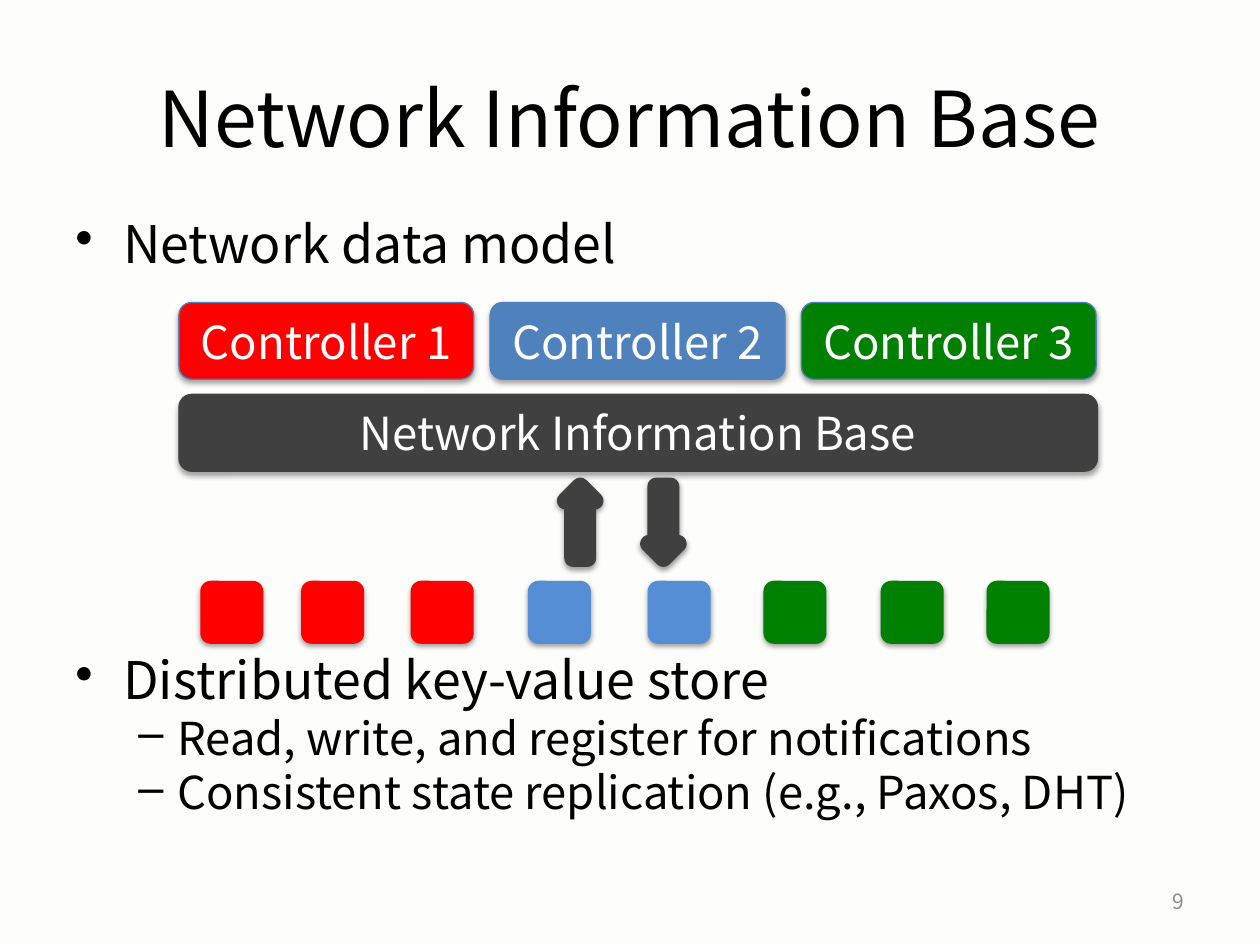
from lxml.etree import SubElement
from pptx import Presentation
from pptx.dml.color import RGBColor
from pptx.enum.shapes import MSO_SHAPE as Kind
from pptx.enum.text import MSO_ANCHOR as Anchor, PP_ALIGN as Align
from pptx.oxml.ns import qn
from pptx.util import Inches, Pt

COLORS = {
    "paper": "FDFDFC", "ink": "000000", "white": "FFFFFF", "page": "8C8C8C",
    "dark": "404040", "red": "FF0000", "blue": "4F81BD", "sky": "558ED5",
    "green": "008000",
}


def rgb(name):
    return RGBColor.from_string(COLORS[name])


class Deck:
    font = "Noto Sans CJK JP"

    def __init__(self, slide):
        self.slide = slide
        fill = slide.background.fill
        fill.solid()
        fill.fore_color.rgb = rgb("paper")

    def run(self, para, text, size, color):
        run = para.add_run()
        run.text = text
        run.font.size = Pt(size)
        run.font.name = self.font
        run.font.color.rgb = rgb(color)

    def frame(self, box, anchor):
        frame = self.slide.shapes.add_textbox(*map(Inches, box)).text_frame
        frame.word_wrap = True
        frame.vertical_anchor = anchor
        return frame

    def label(self, box, text, size, color, align):
        para = self.frame(box, Anchor.MIDDLE).paragraphs[0]
        para.alignment = align
        self.run(para, text, size, color)

    def bullets(self, box, items):
        """Write (level, text) items as a bulleted list."""
        frame = self.frame(box, Anchor.TOP)
        styles = [("•", 0.38, 0.38, 29.6), ("–", 0.81, 0.31, 25.9)]
        for i, (level, text) in enumerate(items):
            para = frame.add_paragraph() if i else frame.paragraphs[0]
            mark, left, hang, size = styles[level]
            para.level = level
            para.line_spacing = 0.9
            para.space_before = Pt(3)
            props = para._p.get_or_add_pPr()
            props.set("marL", str(Inches(left)))
            props.set("indent", str(-Inches(hang)))
            SubElement(props, qn("a:buChar"), char=mark)
            self.run(para, text, size, "ink")

    def shade(self, shape, drop, alpha):
        """Give the shape a soft shadow straight below it."""
        shape.shadow.inherit = False
        effects = shape._element.spPr.find(qn("a:effectLst"))
        outer = SubElement(effects, qn("a:outerShdw"), blurRad=str(Pt(3.1)),
                           dist=str(Pt(drop)), dir="5400000", rotWithShape="0")
        tint = SubElement(outer, qn("a:srgbClr"), val=COLORS["ink"])
        SubElement(tint, qn("a:alpha"), val=str(alpha * 1000))

    def shape(self, kind, box, fill, line=None, width=0.75, drop=1.6, alpha=38):
        shape = self.slide.shapes.add_shape(kind, *map(Inches, box))
        shape.fill.solid()
        shape.fill.fore_color.rgb = rgb(fill)
        if line:
            shape.line.color.rgb = rgb(line)
            shape.line.width = Pt(width)
        else:
            shape.line.fill.background()
        self.shade(shape, drop, alpha)
        return shape

    def block(self, box, text, fill, line):
        shape = self.shape(Kind.ROUNDED_RECTANGLE, box, fill, line,
                           drop=1.8, alpha=35)
        frame = shape.text_frame
        frame.vertical_anchor = Anchor.MIDDLE
        para = frame.paragraphs[0]
        para.alignment = Align.CENTER
        self.run(para, text, 26, "white")

    def node(self, left, fill):
        self.shape(Kind.ROUNDED_RECTANGLE, (left, 4.61, 0.5, 0.5), fill)

    def arrow(self, left, turn):
        shape = self.shape(Kind.UP_ARROW, (left, 3.86, 0.23, 0.57),
                           "dark", "dark", 10)
        shape.rotation = turn
        SubElement(shape.line._get_or_add_ln(), qn("a:round"))


def main():
    prs = Presentation()
    prs.slide_width, prs.slide_height = Inches(10), Inches(7.5)
    deck = Deck(prs.slides.add_slide(prs.slide_layouts[6]))

    deck.label((0.5, 0.3, 9, 1.25), "Network Information Base", 44, "ink",
               Align.CENTER)
    deck.bullets((0.5, 1.69, 9, 0.65), [(0, "Network data model")])
    deck.bullets((0.5, 5.15, 9, 1.75), [
        (0, "Distributed key-value store"),
        (1, "Read, write, and register for notifications"),
        (1, "Consistent state replication (e.g., Paxos, DHT)"),
    ])
    deck.label((7.17, 6.95, 2.33, 0.4), "9", 12, "page", Align.RIGHT)

    deck.block((1.42, 3.13, 7.29, 0.61), "Network Information Base",
               "dark", "dark")
    for i, fill in enumerate(["red", "blue", "green"]):
        deck.block((1.42 + 2.47 * i, 2.4, 2.34, 0.61), f"Controller {i + 1}",
                   fill, "blue")

    deck.arrow(4.49, 0)
    deck.arrow(5.15, 180)

    nodes = {"red": [1.59, 2.39, 3.26], "sky": [4.19, 5.14],
             "green": [6.06, 6.99, 7.83]}
    for fill, lefts in nodes.items():
        for left in lefts:
            deck.node(left, fill)

    prs.save("out.pptx")


if __name__ == "__main__":
    main()
